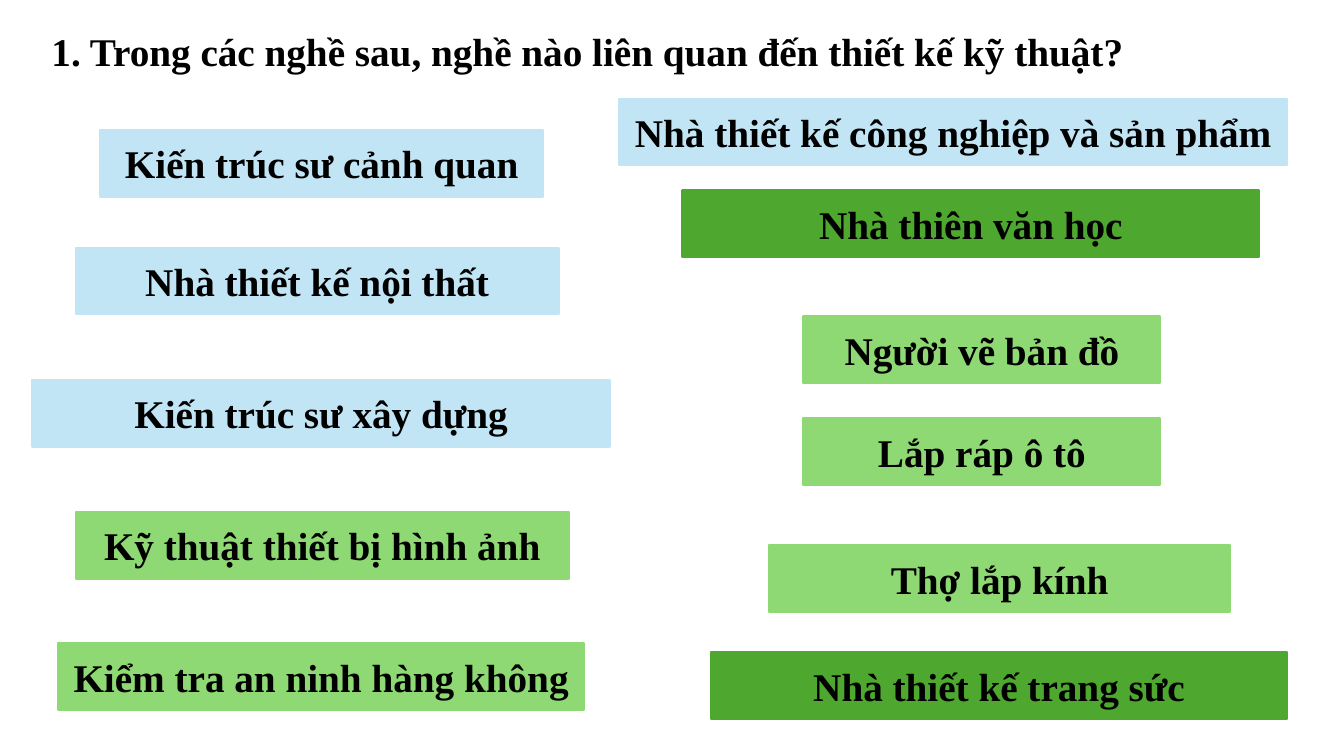
import pptx
import pptx.util
import pptx.dml.color
import pptx.enum.shapes
import pptx.enum.text

# Content: places are percentages of the slide's width and height
COLORS = {"text": "000000", "design": "C1E5F5", "technical": "8ED973", "other": "4EA72E"}
TITLE = "1. Trong các nghề sau, nghề nào liên quan đến thiết kế kỹ thuật?"
TITLE_BOX = (3.08, 2.93, 95.4, 7.6)
CARD_HEIGHT = 8.8
# (label, colour, left, top, width)
CARDS = [
    ("Kiến trúc sư cảnh quan", "design", 7.43, 17.2, 33),
    ("Nhà thiết kế nội thất", "design", 5.63, 32.8, 35.93),
    ("Kiến trúc sư xây dựng", "design", 2.4, 50.27, 42.98),
    ("Kỹ thuật thiết bị hình ảnh", "technical", 5.63, 67.73, 36.68),
    ("Kiểm tra an ninh hàng không", "technical", 4.35, 85.07, 39.08),
    ("Nhà thiết kế công nghiệp và sản phẩm", "design", 46.05, 13.07, 49.73),
    ("Người vẽ bản đồ", "technical", 59.78, 41.87, 26.55),
    ("Lắp ráp ô tô", "technical", 59.78, 55.33, 26.55),
    ("Thợ lắp kính", "technical", 57.23, 72.13, 34.28),
    ("Nhà thiên văn học", "other", 50.78, 25.2, 42.9),
    ("Nhà thiết kế trang sức", "other", 52.88, 86.27, 42.9),
]
FONT = {"name": "Times New Roman", "size": pptx.util.Pt(28), "bold": True}
ALIGN = pptx.enum.text.PP_ALIGN
ANCHOR = pptx.enum.text.MSO_ANCHOR

prs = pptx.Presentation()
prs.slide_width = pptx.util.Inches(13.33)
prs.slide_height = pptx.util.Inches(7.5)
s = prs.slides.add_slide(prs.slide_layouts[5])


def color(name):
    return pptx.dml.color.RGBColor.from_string(COLORS[name])


def place(left, top, width, height):
    return [int(share * side / 100) for share, side in
            zip((left, top, width, height), (prs.slide_width, prs.slide_height) * 2)]


def write(sp, text, align, anchor):
    tf = sp.text_frame
    tf.word_wrap = True
    tf.auto_size = pptx.enum.text.MSO_AUTO_SIZE.NONE
    tf.vertical_anchor = anchor
    p = tf.paragraphs[0]
    p.alignment = align
    r = p.add_run()
    r.text = text
    for key, value in FONT.items():
        setattr(r.font, key, value)
    r.font.color.rgb = color("text")


# Question
title = s.shapes.title
title.left, title.top, title.width, title.height = place(*TITLE_BOX)
write(title, TITLE, ALIGN.LEFT, ANCHOR.TOP)

# Occupation cards
for label, fill, left, top, width in CARDS:
    sp = s.shapes.add_shape(pptx.enum.shapes.MSO_SHAPE.RECTANGLE,
                            *place(left, top, width, CARD_HEIGHT))
    sp.shadow.inherit = False
    sp.fill.solid()
    sp.fill.fore_color.rgb = color(fill)
    sp.line.color.rgb = color(fill)
    sp.line.width = pptx.util.Pt(1.5)
    write(sp, label, ALIGN.CENTER, ANCHOR.MIDDLE)

prs.save("out.pptx")
